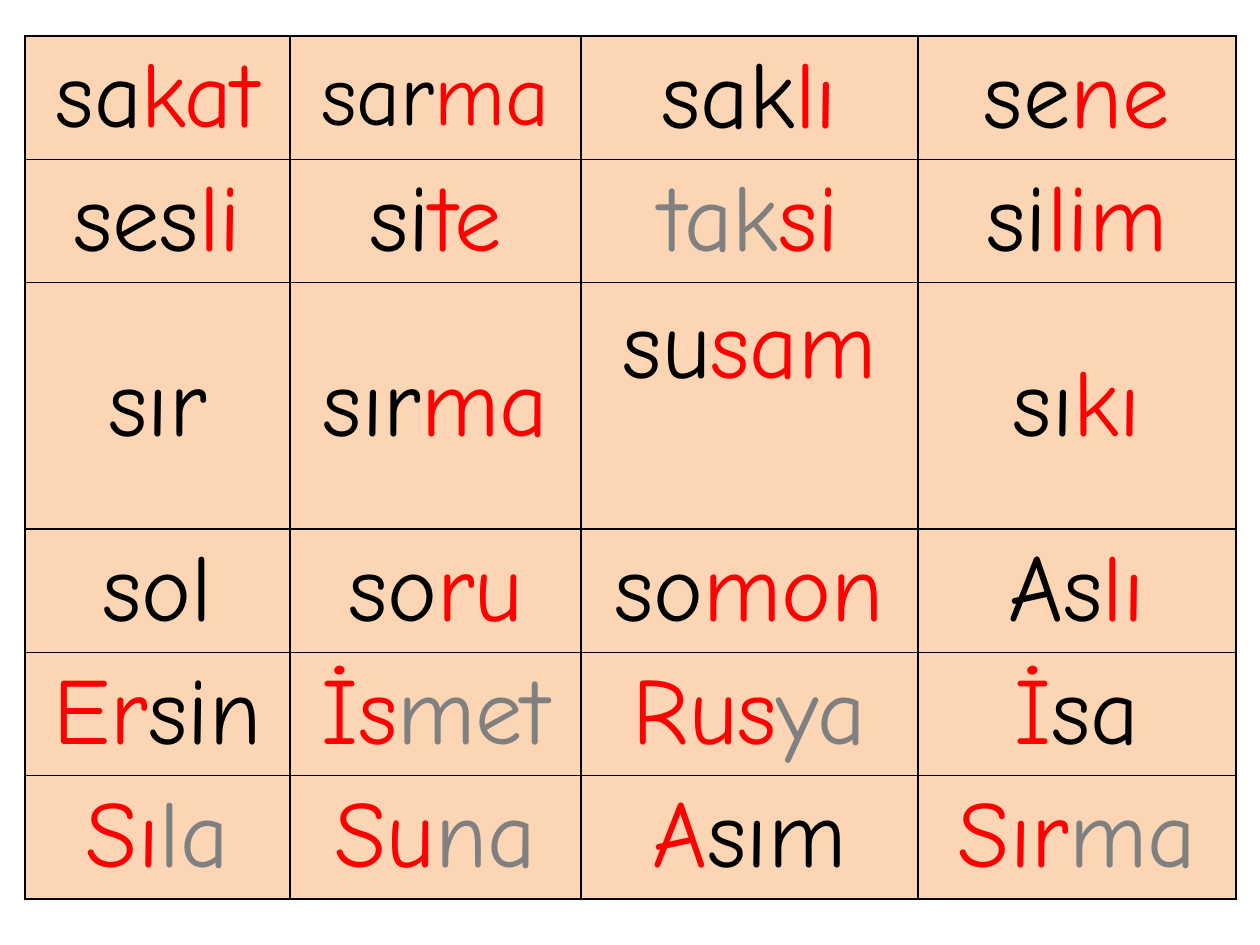
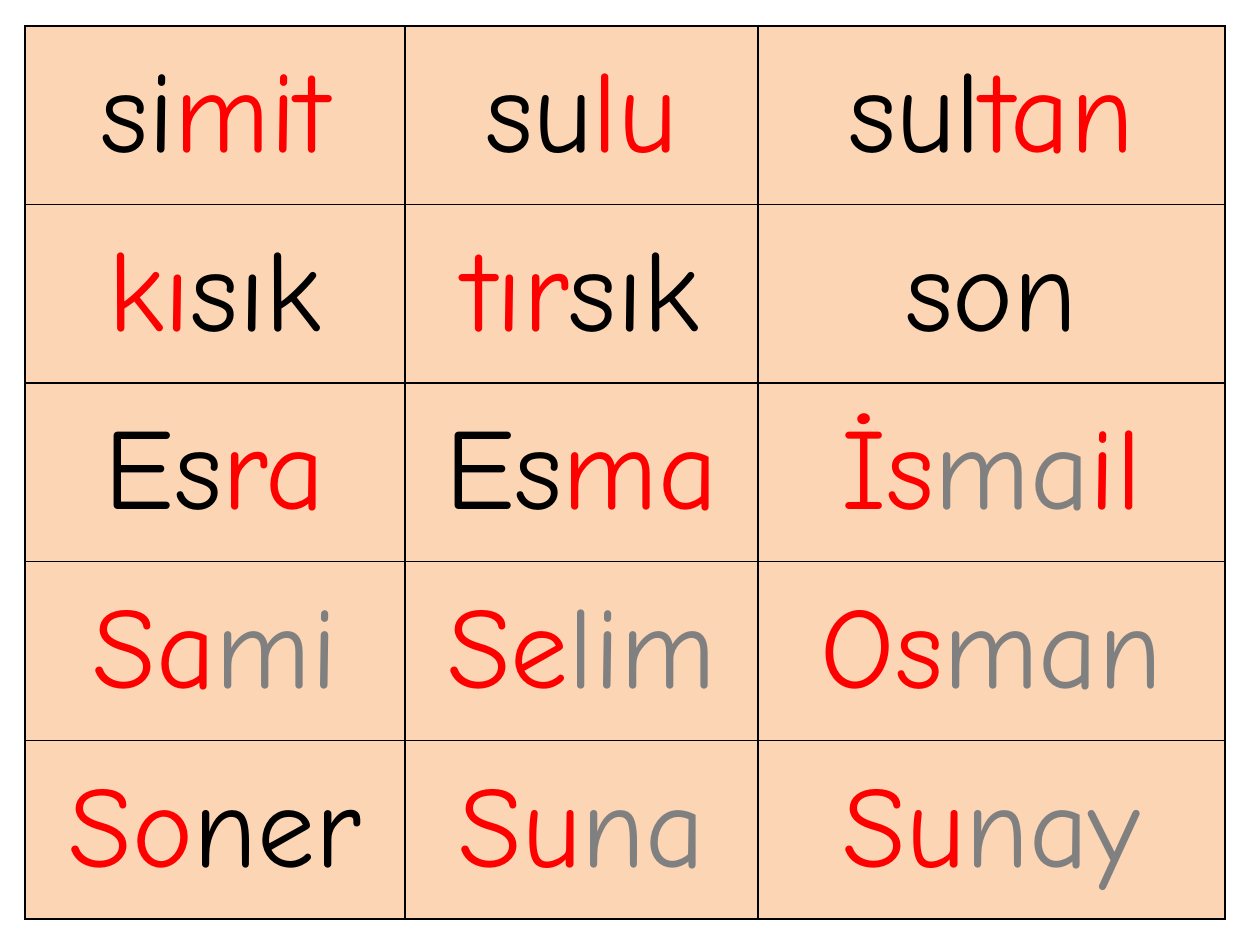
import itertools

import pptx
import pptx.dml.color
import pptx.enum.text
import pptx.oxml.ns
import pptx.util
from lxml import etree

# Content: each word is split into syllable runs, written "colour:letters"
WORD_TABLES = [
    {
        "left": 25, "top": 36, "height": 863, "size": 54,
        "columns": [265, 291, 337, 318],
        "row_shares": [1, 1, 2, 1, 1, 1],
        "words": [
            ["black:sa red:kat", "black:sar red:ma", "black:sak red:lı", "black:se red:ne"],
            ["black:ses red:li", "black:si red:te", "grey:tak red:si", "black:si red:lim"],
            ["black:sır", "black:sır red:ma", "black:su red:sam", "black:sı red:kı"],
            ["black:sol", "black:so red:ru", "black:so red:mon", "black:As red:lı"],
            ["red:Er black:sin", "red:İs grey:met", "red:Rus grey:ya", "red:İ black:sa"],
            ["red:Sı grey:la", "red:Su grey:na", "red:A black:sım", "red:Sır grey:ma"],
        ],
        # Exceptions, keyed by (row, column)
        "sizes": {(0, 0): 53, (0, 1): 49},
        "bottom_margins": {(2, 2): 116},
    },
    {
        "left": 25, "top": 26, "height": 893, "size": 66,
        "columns": [380, 353, 467],
        "row_shares": [1, 1, 1, 1, 1],
        "words": [
            ["black:si red:mit", "black:su red:lu", "black:sul red:tan"],
            ["red:kı black:sık", "red:tır black:sık", "black:son"],
            ["black:Es red:ra", "black:Es red:ma", "red:İs grey:ma red:il"],
            ["red:Sa grey:mi", "red:Se grey:lim", "red:Os grey:man"],
            ["red:So black:ner", "red:Su grey:na", "red:Su grey:nay"],
        ],
        "sizes": {},
        "bottom_margins": {},
    },
]

# Shared style
COLOURS = {"black": "000000", "red": "FF0000", "grey": "808080", "peach": "FCD5B5"}
FONT = "Comic Neue"
SIDE_MARGIN = 9
PX_PER_INCH = 126


def px(length):
    return pptx.util.Emu(round(length * 914400 / PX_PER_INCH))


def rgb(name):
    return pptx.dml.color.RGBColor.from_string(COLOURS[name])


def add_borders(cell):
    properties = cell._tc.get_or_add_tcPr()
    qn = pptx.oxml.ns.qn
    for side in ("lnL", "lnR", "lnT", "lnB"):
        line = etree.SubElement(properties, qn(f"a:{side}"), w=str(pptx.util.Pt(1)))
        fill = etree.SubElement(line, qn("a:solidFill"))
        etree.SubElement(fill, qn("a:srgbClr"), val=COLOURS["black"])


def fill_cell(cell, word, size, bottom_margin):
    add_borders(cell)
    cell.fill.solid()
    cell.fill.fore_color.rgb = rgb("peach")
    cell.vertical_anchor = pptx.enum.text.MSO_ANCHOR.MIDDLE
    cell.margin_left = cell.margin_right = px(SIDE_MARGIN)
    cell.margin_top = 0
    cell.margin_bottom = px(bottom_margin)
    para = cell.text_frame.paragraphs[0]
    para.alignment = pptx.enum.text.PP_ALIGN.CENTER
    for part in word.split():
        colour, letters = part.split(":")
        span = para.add_run()
        span.text = letters
        span.font.name = FONT
        span.font.size = pptx.util.Pt(size)
        span.font.color.rgb = rgb(colour)


def add_word_table(page, content):
    columns, shares = content["columns"], content["row_shares"]
    frame = page.shapes.add_table(
        len(shares), len(columns), px(content["left"]), px(content["top"]),
        px(sum(columns)), px(content["height"]))
    table = frame.table
    table.first_row = table.horz_banding = False
    for column, width in zip(table.columns, columns):
        column.width = px(width)
    for row, share in zip(table.rows, shares):
        row.height = px(content["height"] * share / sum(shares))
    for place in itertools.product(range(len(shares)), range(len(columns))):
        row, column = place
        fill_cell(table.cell(row, column), content["words"][row][column],
                  content["sizes"].get(place, content["size"]),
                  content["bottom_margins"].get(place, 0))


def main():
    deck = pptx.Presentation()
    deck.slide_width, deck.slide_height = px(1260), px(945)
    for content in WORD_TABLES:
        page = deck.slides.add_slide(deck.slide_layouts[6])
        add_word_table(page, content)
    deck.save("out.pptx")


if __name__ == "__main__":
    main()
